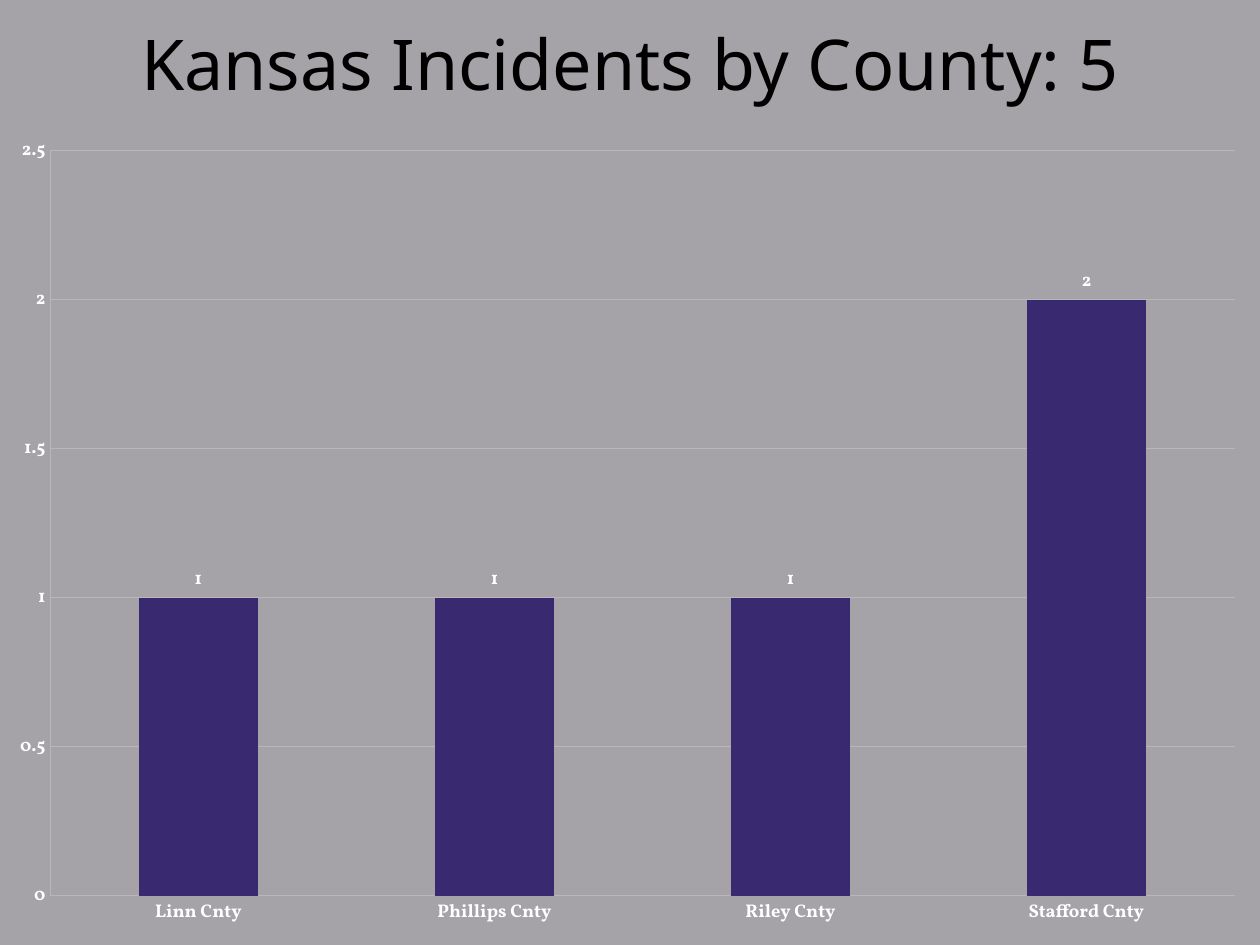
"""Build the slide of Kansas incidents by county."""
from dataclasses import dataclass

from lxml import etree
from pptx import Presentation
from pptx import util as u
from pptx.chart.data import CategoryChartData
from pptx.dml.color import RGBColor
from pptx.enum import chart as kinds, text
from pptx.oxml.ns import qn


@dataclass(frozen=True)
class Theme:
    """Colours, fonts and type sizes of the slide."""
    background: str = "A5A3A8"
    title: str = "000000"
    label: str = "FFFFFF"
    bar: str = "382971"
    grid: str = "B9B7BB"
    title_font: str = "Noto Sans"
    chart_font: str = "Vollkorn"
    title_size: float = 40
    chart_size: float = 10.5


THEME = Theme()
INCIDENTS = {"Linn Cnty": 1, "Phillips Cnty": 1, "Riley Cnty": 1, "Stafford Cnty": 2}
PLOT_FRAME = {"x": 0.04, "y": 0.03, "w": 0.94, "h": 0.91}


def paint(fill, color):
    """Give a fill one solid colour."""
    fill.solid()
    fill.fore_color.rgb = RGBColor.from_string(color)


def format_font(font, *, name, size, color, bold=False):
    """Set the face, size, colour and weight of a font."""
    font.name, font.size, font.bold = name, u.Pt(size), bold
    font.color.rgb = RGBColor.from_string(color)


def write_text(box, content, *, align=text.PP_ALIGN.CENTER, **font_format):
    """Write one formatted paragraph in a shape."""
    frame = box.text_frame
    frame.word_wrap = True
    frame.auto_size = text.MSO_AUTO_SIZE.NONE
    frame.vertical_anchor = text.MSO_ANCHOR.MIDDLE
    para = frame.paragraphs[0]
    para.alignment = align
    span = para.add_run()
    span.text = content
    format_font(span.font, **font_format)


def add_title(page, content):
    """Place the title across the top of the page."""
    box = page.shapes.title
    box.left, box.top = u.Inches(0), u.Inches(0.08)
    box.width, box.height = u.Inches(10), u.Inches(0.83)
    write_text(box, content, name=THEME.title_font, size=THEME.title_size, color=THEME.title)


def style_line(line):
    """Draw a thin chart line in the grid colour."""
    line.width = u.Pt(0.75)
    line.color.rgb = RGBColor.from_string(THEME.grid)


def place_plot(chart, frame):
    """Fix the inner plot area as fractions of the chart."""
    area = chart.plots[0]._element.getparent()
    for old in area.findall(qn("c:layout")):
        area.remove(old)
    layout = etree.Element(qn("c:layout"))
    area.insert(0, layout)
    manual = etree.SubElement(layout, qn("c:manualLayout"))
    settings = {"layoutTarget": "inner", "xMode": "edge", "yMode": "edge", **frame}
    for tag, value in settings.items():
        etree.SubElement(manual, qn(f"c:{tag}")).set("val", str(value))


def style_axes(chart):
    """Set the scale, grid and lines of both axes."""
    for axis in (chart.category_axis, chart.value_axis):
        axis.major_tick_mark = axis.minor_tick_mark = kinds.XL_TICK_MARK.NONE
        style_line(axis.format.line)
    scale = chart.value_axis
    scale.minimum_scale, scale.maximum_scale, scale.major_unit = 0, 2.5, 0.5
    scale.has_major_gridlines = True
    style_line(scale.major_gridlines.format.line)


def add_column_chart(page, incidents):
    """Add the column chart of incidents by county."""
    data = CategoryChartData()
    data.categories = list(incidents)
    data.add_series("Series 1", list(incidents.values()))
    chart = page.shapes.add_chart(
        kinds.XL_CHART_TYPE.COLUMN_CLUSTERED,
        u.Inches(0), u.Inches(1), u.Inches(10), u.Inches(6.5), data,
    ).chart
    chart.has_title = chart.has_legend = False
    format_font(chart.font, name=THEME.chart_font, size=THEME.chart_size,
                color=THEME.label, bold=True)
    plot = chart.plots[0]
    plot.gap_width = 150
    plot.vary_by_categories = False
    series = plot.series[0]
    paint(series.format.fill, THEME.bar)
    series.data_labels.show_value = True
    series.data_labels.position = kinds.XL_LABEL_POSITION.OUTSIDE_END
    style_axes(chart)
    place_plot(chart, PLOT_FRAME)


def main():
    """Build and save the deck."""
    deck = Presentation()
    deck.slide_width, deck.slide_height = u.Inches(10), u.Inches(7.5)
    page = deck.slides.add_slide(deck.slide_layouts.get_by_name("Title Only"))
    paint(page.background.fill, THEME.background)
    add_title(page, f"Kansas Incidents by County: {sum(INCIDENTS.values())}")
    add_column_chart(page, INCIDENTS)
    deck.save("out.pptx")


if __name__ == "__main__":
    main()
